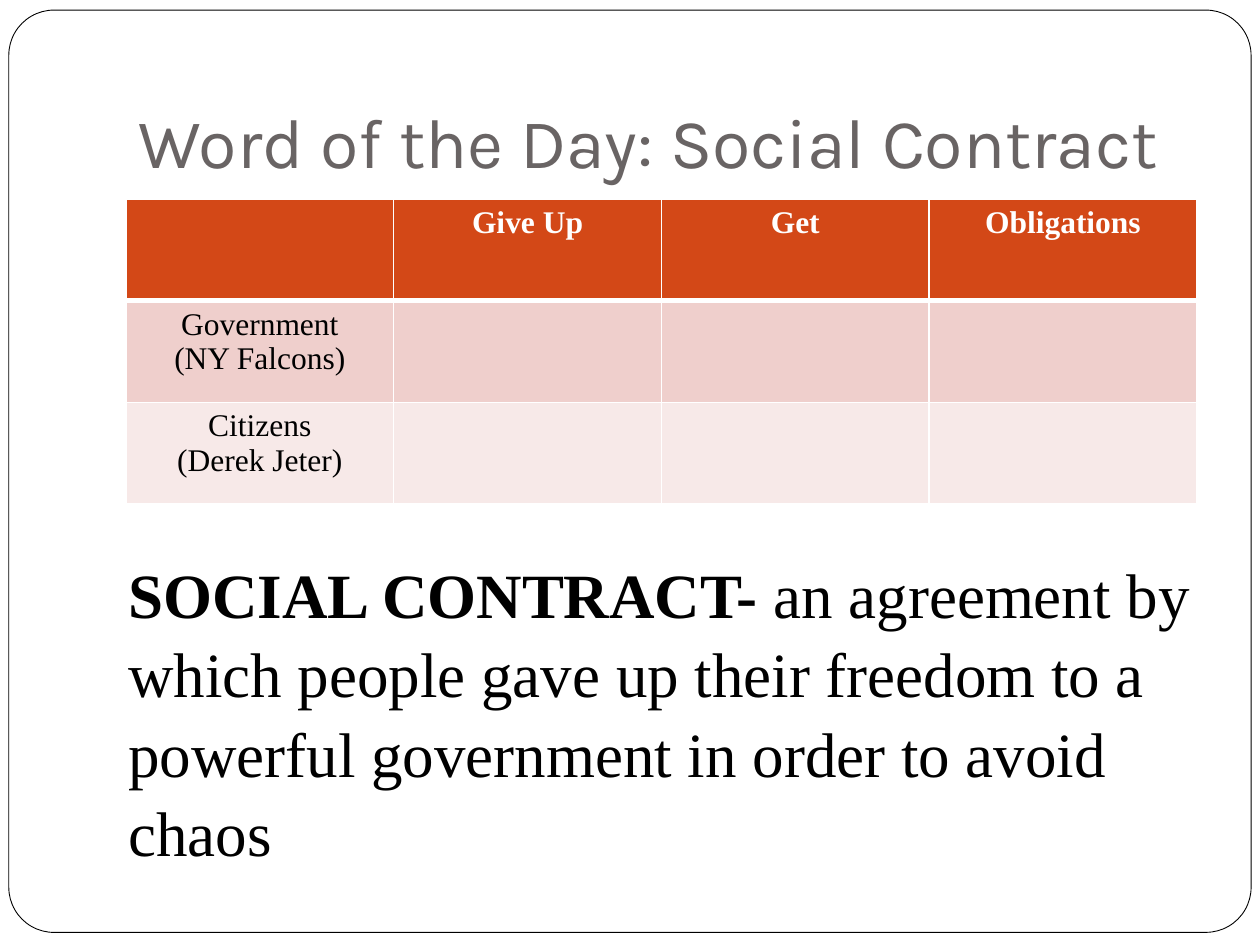
from lxml.etree import SubElement
from pptx import Presentation
from pptx.dml.color import RGBColor
from pptx.enum.shapes import MSO_SHAPE as Shapes
from pptx.enum.text import MSO_ANCHOR as Anchor, PP_ALIGN as Align
from pptx.oxml.ns import qn
from pptx.util import Inches, Pt

WIDTH, HEIGHT = 10, 7.5
SERIF = "Times New Roman"
TITLE = "Word of the Day: Social Contract"
ROWS = [
    ("", "Give Up", "Get", "Obligations"),
    ("Government\n(NY Falcons)", "", "", ""),
    ("Citizens\n(Derek Jeter)", "", "", ""),
]
ROW_FILLS = ["D34817", "EFCFCC", "F7E9E8"]
DEFINITION = [
    ("SOCIAL CONTRACT- ", True),
    ("an agreement by which people gave up their freedom to a powerful "
     "government in order to avoid chaos", False),
]


def color(value):
    return RGBColor.from_string(value)


def box(left, top, width, height):
    return [Inches(length) for length in (left, top, width, height)]


def set_fill(target, value):
    target.fill.solid()
    target.fill.fore_color.rgb = color(value)


def set_font(font, name, size, value, bold=False):
    font.name, font.size, font.bold = name, Pt(size), bold
    font.color.rgb = color(value)


def set_borders(cell, widths):
    properties = cell._tc.get_or_add_tcPr()
    for index, (side, width) in enumerate(widths.items()):
        line = properties.makeelement(qn(f"a:ln{side}"), {"w": str(Pt(width))})
        fill = SubElement(line, qn("a:solidFill"))
        SubElement(fill, qn("a:srgbClr"), val="FFFFFF")
        properties.insert(index, line)


def add_frame(slide):
    frame = slide.shapes.add_shape(
        Shapes.ROUNDED_RECTANGLE, *box(0.07, 0.08, 9.86, 7.32))
    frame.adjustments[0] = 0.049
    frame.shadow.inherit = False
    set_fill(frame, "FFFFFF")
    frame.line.color.rgb = color("000000")
    frame.line.width = Pt(0.5)
    slide.shapes._spTree.insert(2, frame._element)


def add_title(slide):
    title = slide.shapes.title
    title.left, title.top, title.width, title.height = box(1, 0.3, 8.5, 1.25)
    text_frame = title.text_frame
    text_frame.text = TITLE
    text_frame.vertical_anchor = Anchor.BOTTOM
    text_frame.margin_bottom = Inches(0.1)
    paragraph = text_frame.paragraphs[0]
    paragraph.alignment = Align.LEFT
    set_font(paragraph.font, "Karla", 40, "696464")


def add_contract_table(slide):
    table = slide.shapes.add_table(
        len(ROWS), len(ROWS[0]), *box(1, 1.58, 8.5, 2.42)).table
    for row, texts in enumerate(ROWS):
        header = row == 0
        for column, text in enumerate(texts):
            cell = table.cell(row, column)
            cell.text = text
            set_fill(cell, ROW_FILLS[row])
            set_borders(cell, {"L": 1, "R": 1, "T": 3 if row == 1 else 1,
                               "B": 3 if header else 1})
            for paragraph in cell.text_frame.paragraphs:
                paragraph.alignment = Align.CENTER
                set_font(paragraph.font, SERIF, 18,
                         "FFFFFF" if header else "000000", header)


def add_definition(slide):
    text_frame = slide.shapes.add_textbox(*box(0.92, 4.33, 8.75, 1.92)).text_frame
    text_frame.word_wrap = True
    paragraph = text_frame.paragraphs[0]
    paragraph.line_spacing = 1.05
    for text, bold in DEFINITION:
        run = paragraph.add_run()
        run.text = text
        set_font(run.font, SERIF, 36, "000000", bold)


def main():
    presentation = Presentation()
    presentation.slide_width = Inches(WIDTH)
    presentation.slide_height = Inches(HEIGHT)
    slide = presentation.slides.add_slide(presentation.slide_layouts[5])
    add_frame(slide)
    add_title(slide)
    add_contract_table(slide)
    add_definition(slide)
    presentation.save("out.pptx")


if __name__ == "__main__":
    main()
